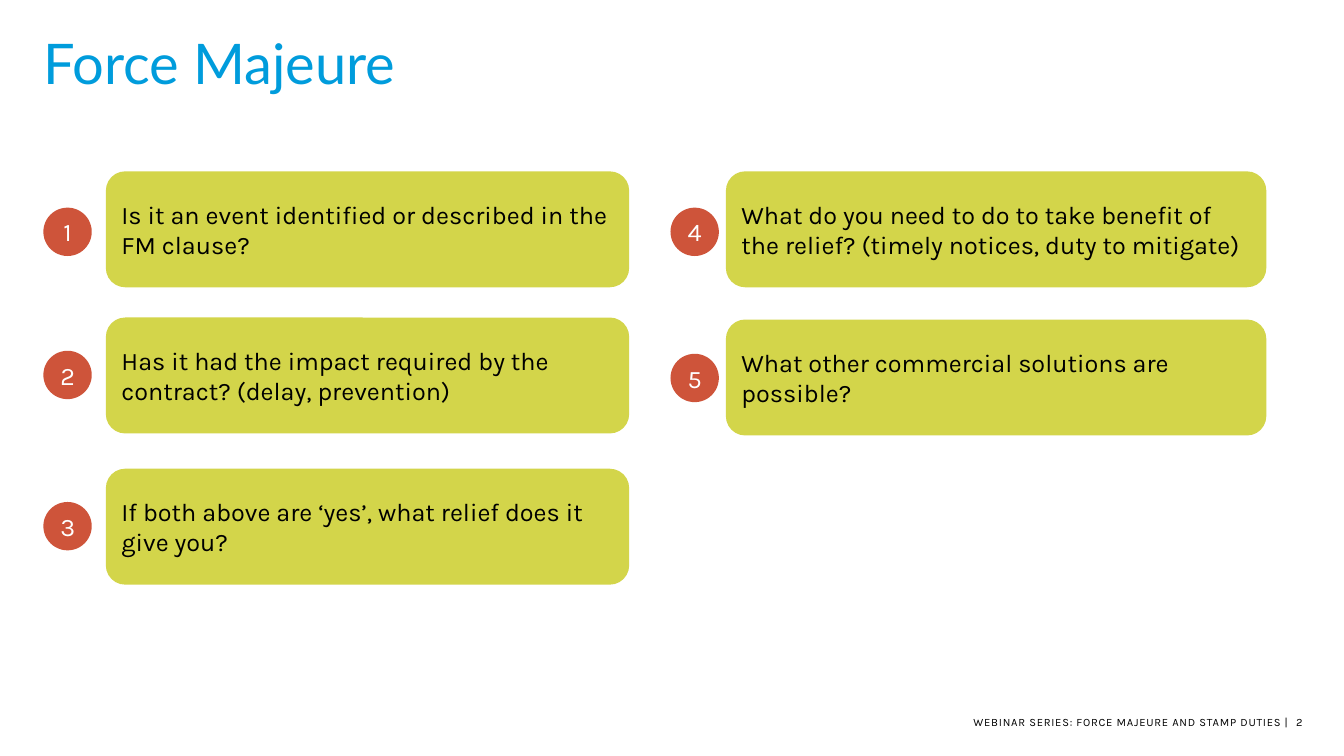
from pptx import Presentation
from pptx.dml.color import RGBColor
from pptx.enum.shapes import MSO_SHAPE
from pptx.enum.text import MSO_ANCHOR, PP_ALIGN
from pptx.util import Inches, Pt

ROUNDED, OVAL = MSO_SHAPE.ROUNDED_RECTANGLE, MSO_SHAPE.OVAL
TOP, MIDDLE = MSO_ANCHOR.TOP, MSO_ANCHOR.MIDDLE
LEFT, CENTER, RIGHT = PP_ALIGN.LEFT, PP_ALIGN.CENTER, PP_ALIGN.RIGHT

BLUE = RGBColor(0x00, 0x9C, 0xDC)
LIME = RGBColor(0xD3, 0xD5, 0x4A)
RUST = RGBColor(0xCE, 0x54, 0x3A)
BLACK = RGBColor(0x00, 0x00, 0x00)
WHITE = RGBColor(0xFF, 0xFF, 0xFF)

# Content
TITLE = "Force Majeure"
FOOTER = "WEBINAR SERIES: FORCE MAJEURE AND STAMP DUTIES |  "
PAGE = "2"
# Each column: badge left, card left, card width, [(card top, badge top, question)]
COLUMNS = [
    (0.43, 1.05, 5.19, [
        (1.7, 2.06, "Is it an event identified or described in the FM clause?"),
        (3.15, 3.48, "Has it had the impact required by the contract? (delay, prevention)"),
        (4.65, 4.98, "If both above are ‘yes’, what relief does it give you?"),
    ]),
    (6.65, 7.2, 5.36, [
        (1.7, 2.06, "What do you need to do to take benefit of the relief? "
                    "(timely notices, duty to mitigate)"),
        (3.17, 3.51, "What other commercial solutions are possible?"),
    ]),
]
CARD_HEIGHT = 1.15
BADGE_SIZE = 0.48


def set_font(p, name, size, color):
    p.font.name, p.font.size = name, Pt(size)
    p.font.color.rgb = color


def set_margins(tf):
    tf.margin_left = tf.margin_top = tf.margin_right = 0
    tf.margin_bottom = Inches(0.05)


def add_label(s, kind, box, fill, text, color, align):
    sp = s.shapes.add_shape(kind, *map(Inches, box))
    sp.shadow.inherit = False
    sp.fill.solid()
    sp.fill.fore_color.rgb = fill
    sp.line.fill.background()
    tf = sp.text_frame
    tf.word_wrap = True
    tf.vertical_anchor = MIDDLE
    p = tf.paragraphs[0]
    p.text, p.alignment = text, align
    set_font(p, "Karla", 18, color)


prs = Presentation()
prs.slide_width, prs.slide_height = Inches(13.33), Inches(7.5)
s = prs.slides.add_slide(prs.slide_layouts[5])

# Title
title = s.shapes.title
title.left, title.top = Inches(0.43), Inches(0.36)
title.width, title.height = Inches(10.75), Inches(0.99)
tf = title.text_frame
set_margins(tf)
tf.vertical_anchor = TOP
p = tf.paragraphs[0]
p.text, p.alignment, p.line_spacing = TITLE, LEFT, 0.9
set_font(p, "Lato", 40, BLUE)

# Numbered question cards
number = 0
for badge_left, card_left, card_width, questions in COLUMNS:
    for card_top, badge_top, question in questions:
        number += 1
        add_label(s, ROUNDED, (card_left, card_top, card_width, CARD_HEIGHT),
                  LIME, question, BLACK, LEFT)
        add_label(s, OVAL, (badge_left, badge_top, BADGE_SIZE, BADGE_SIZE),
                  RUST, str(number), WHITE, CENTER)

# Footer with page number
footer = s.shapes.add_textbox(Inches(8.08), Inches(7.1), Inches(4.84), Inches(0.19))
tf = footer.text_frame
tf.word_wrap = True
set_margins(tf)
p = tf.paragraphs[0]
p.alignment = RIGHT
r = p.add_run()
r.text = FOOTER
r.font._element.set("spc", "50")  # letter spacing in hundredths of a point
p.add_run().text = PAGE
set_font(p, "Karla", 8, BLACK)

prs.save("out.pptx")
